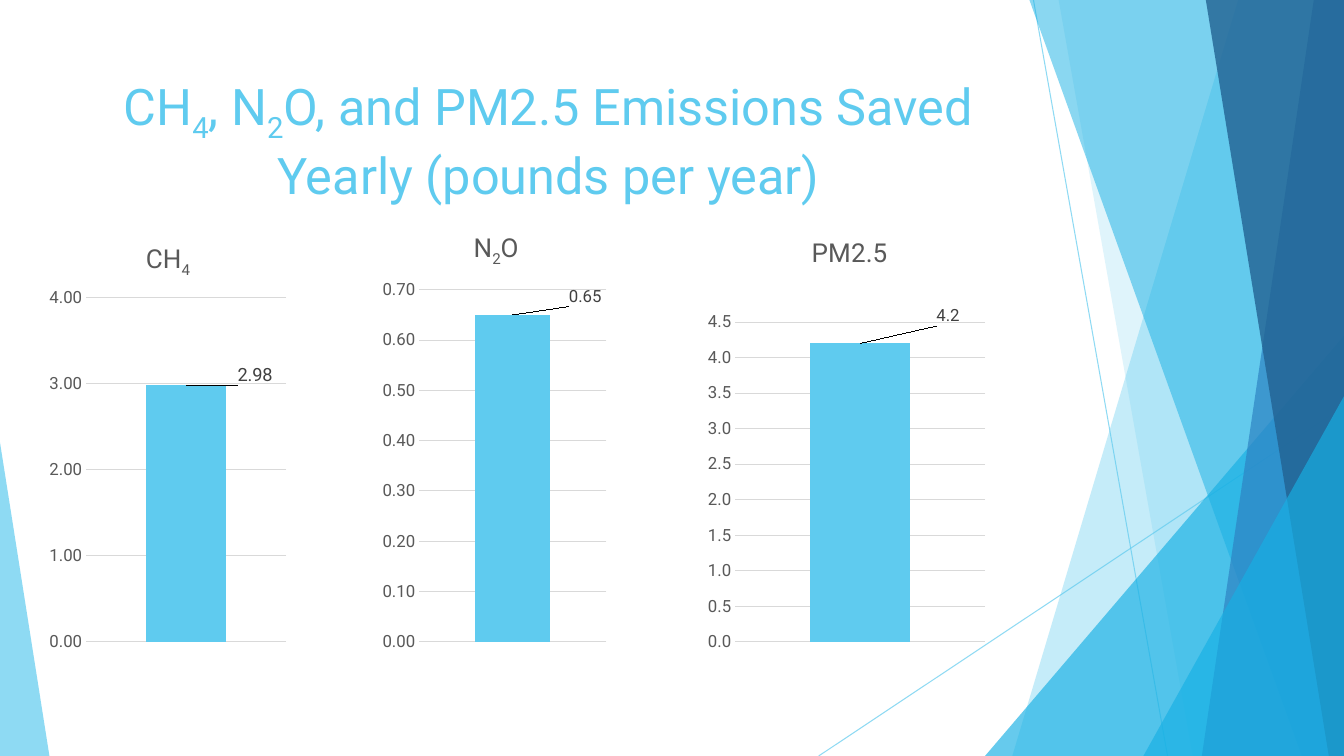
import pptx
import pptx.chart.data
import pptx.dml.color
import pptx.enum.chart
import pptx.enum.shapes
import pptx.enum.text
import pptx.oxml
import pptx.oxml.ns
import pptx.util
from pptx.util import Inches

RGB = pptx.dml.color.RGBColor
SKY = RGB(0x5F, 0xCB, 0xEF)
CYAN = RGB(0x17, 0xB0, 0xE4)
BLUE = RGB(0x2E, 0x83, 0xC3)
NAVY = RGB(0x22, 0x62, 0x92)
GRAY = RGB(0x59, 0x59, 0x59)
DARK = RGB(0x40, 0x40, 0x40)
GRID = RGB(0xD9, 0xD9, 0xD9)
FACE = "Roboto"
WIDE, HIGH = 13.33, 7.5

# Top-left x, bottom-left x, colour, opacity; each band runs to the right edge
BANDS = [
    (12.28, 10.04, SKY, 36),
    (10.5, 11.83, SKY, 20),
    (10.21, 12.91, CYAN, 50),
    (13.03, 11.92, BLUE, 70),
    (11.96, 13.18, NAVY, 80),
]

# Box, title and its place, plot area, value, axis top and step, format,
# label size and label shift; places are fractions of the chart
CHARTS = [
    dict(box=(0.44, 2.2, 2.44, 4.36), name="CH_4", spot=(0.4, 0.04),
         plot=(0.17, 0.173, 0.813, 0.783), value=2.98, top=4, step=1,
         form="#,##0.00", size=13, shift=(0.28, 0.01)),
    dict(box=(3.74, 2.11, 2.32, 4.45), name="N_2_O", spot=(0.4, 0.035),
         plot=(0.18, 0.172, 0.8, 0.785), value=0.65, top=0.7, step=0.1,
         form="#,##0.00", size=12, shift=(0.31, -0.01)),
    dict(box=(6.96, 2.11, 2.86, 4.45), name="PM2.5", spot=(0.365, 0.04),
         plot=(0.116, 0.244, 0.867, 0.713), value=4.2, top=4.5, step=0.5,
         form="#,##0.0", size=12, shift=(0.305, -0.03)),
]


def apply(item, **values):
    for key, value in values.items():
        setattr(item, key, value)


def style(font, size, color):
    apply(font, name=FACE, size=pptx.util.Pt(size), bold=False)
    font.color.rgb = color


def write(para, text, size, color):
    """Parts between underscores become subscripts."""
    for index, part in enumerate(text.split("_")):
        run = para.add_run()
        run.text = part
        style(run.font, size, color)
        if index % 2:
            run.font._element.set("baseline", "-25000")


def fade(shape, percent):
    for color in shape._element.spPr.iter(pptx.oxml.ns.qn("a:srgbClr")):
        alpha = pptx.oxml.parse_xml(
            f'<a:alpha {pptx.oxml.ns.nsdecls("a")} val="{percent * 1000}"/>')
        color.append(alpha)


def paint(shape, color, percent):
    shape.shadow.inherit = False
    shape.fill.solid()
    shape.fill.fore_color.rgb = color
    shape.line.fill.background()
    fade(shape, percent)


def add_band(slide, top, base, color, percent):
    build = slide.shapes.build_freeform(Inches(top), 0, scale=1.0)
    corners = [(WIDE, 0), (WIDE, HIGH), (base, HIGH)]
    build.add_line_segments([(Inches(x), Inches(y)) for x, y in corners])
    paint(build.convert_to_shape(), color, percent)


def add_wedge(slide, box, peak, color, percent):
    kind = pptx.enum.shapes.MSO_SHAPE.ISOSCELES_TRIANGLE
    shape = slide.shapes.add_shape(kind, *map(Inches, box))
    shape.adjustments[0] = peak
    paint(shape, color, percent)


def add_line(slide, *ends):
    kind = pptx.enum.shapes.MSO_CONNECTOR.STRAIGHT
    line = slide.shapes.add_connector(kind, *map(Inches, ends))
    line.line.color.rgb = SKY
    line.line.width = pptx.util.Pt(0.75)
    fade(line, 70)
    line._element.spPr.append(pptx.oxml.parse_xml(
        f'<a:effectLst {pptx.oxml.ns.nsdecls("a")}/>'))


def layout(**values):
    """Manual placement inside a chart."""
    body = "".join(f'<c:{key} val="{val}"/>' for key, val in values.items())
    return pptx.oxml.parse_xml(
        f'<c:layout {pptx.oxml.ns.nsdecls("c")}>'
        f'<c:manualLayout>{body}</c:manualLayout></c:layout>')


def place(parent, after, **values):
    """Put a manual layout after the named child, or first if it is None."""
    for old in parent.xpath("c:layout"):
        parent.remove(old)
    new = layout(**values)
    if after is None:
        parent.insert(0, new)
    else:
        parent.xpath(after)[0].addnext(new)


def add_chart(slide, box, name, spot, plot, value, top, step, form, size, shift):
    enum = pptx.enum.chart
    data = pptx.chart.data.CategoryChartData(number_format=form)
    data.categories = ["1"]
    data.add_series("Series 1", [value])
    chart = slide.shapes.add_chart(
        enum.XL_CHART_TYPE.COLUMN_CLUSTERED, *map(Inches, box), data).chart
    style(chart.font, 10, RGB(0, 0, 0))
    chart.has_legend = False

    # Title and plot area
    chart.has_title = True
    write(chart.chart_title.text_frame.paragraphs[0], name, 18.6, GRAY)
    place(chart.chart_title._element, "c:tx", xMode="edge", yMode="edge",
          x=spot[0], y=spot[1])
    area = chart._chartSpace.chart.plotArea
    place(area, None, layoutTarget="inner", xMode="edge", yMode="edge",
          **dict(zip("xywh", plot)))

    # Axes
    chart.category_axis.visible = False
    axis = chart.value_axis
    apply(axis, minimum_scale=0, maximum_scale=top, major_unit=step,
          major_tick_mark=enum.XL_TICK_MARK.NONE, has_major_gridlines=True)
    apply(axis.tick_labels, number_format=form, number_format_is_linked=False)
    style(axis.tick_labels.font, 12, GRAY)
    axis.format.line.fill.background()
    grid = axis.major_gridlines.format.line
    grid.color.rgb = GRID
    grid.width = pptx.util.Pt(0.75)

    # Column and its shifted label
    apply(chart.plots[0], gap_width=150, vary_by_categories=False)
    series = chart.plots[0].series[0]
    series.format.fill.solid()
    series.format.fill.fore_color.rgb = SKY
    label = series.points[0].data_label
    style(label.font, size, DARK)
    label.position = enum.XL_LABEL_POSITION.OUTSIDE_END
    apply(series.data_labels, show_value=True, number_format=form,
          number_format_is_linked=False)
    style(series.data_labels.font, size, DARK)
    marks = series.data_labels._element
    place(marks.xpath("c:dLbl")[0], "c:idx", x=shift[0], y=shift[1])
    for lead in marks.xpath("c:showLeaderLines"):
        marks.remove(lead)


def add_title(slide, text):
    title = slide.shapes.title
    apply(title, left=Inches(0.74), top=Inches(0.67),
          width=Inches(9.4), height=Inches(1.44))
    frame = title.text_frame
    apply(frame, word_wrap=True, auto_size=pptx.enum.text.MSO_AUTO_SIZE.NONE,
          vertical_anchor=pptx.enum.text.MSO_ANCHOR.MIDDLE)
    para = frame.paragraphs[0]
    para.alignment = pptx.enum.text.PP_ALIGN.CENTER
    write(para, text, 36, SKY)


def main():
    deck = pptx.Presentation()
    apply(deck, slide_width=Inches(WIDE), slide_height=Inches(HIGH))
    slide = deck.slides.add_slide(deck.slide_layouts[5])

    # Facets at the edges
    add_line(slide, 10.25, 0, 11.58, HIGH)
    add_line(slide, WIDE, 4.03, 8.12, HIGH)
    for band in BANDS[:2]:
        add_band(slide, *band)
    add_wedge(slide, (9.77, 3.33, 3.56, 4.17), 1, CYAN, 66)
    for band in BANDS[2:]:
        add_band(slide, *band)
    add_wedge(slide, (11.34, 3.93, 1.99, 3.57), 1, CYAN, 66)
    add_wedge(slide, (0, 4.39, 0.49, 3.11), 0, SKY, 70)

    # Title and charts
    add_title(slide, "CH_4_, N_2_O, and PM2.5 Emissions Saved Yearly (pounds per year)")
    for item in CHARTS:
        add_chart(slide, **item)
    deck.save("out.pptx")


if __name__ == "__main__":
    main()
